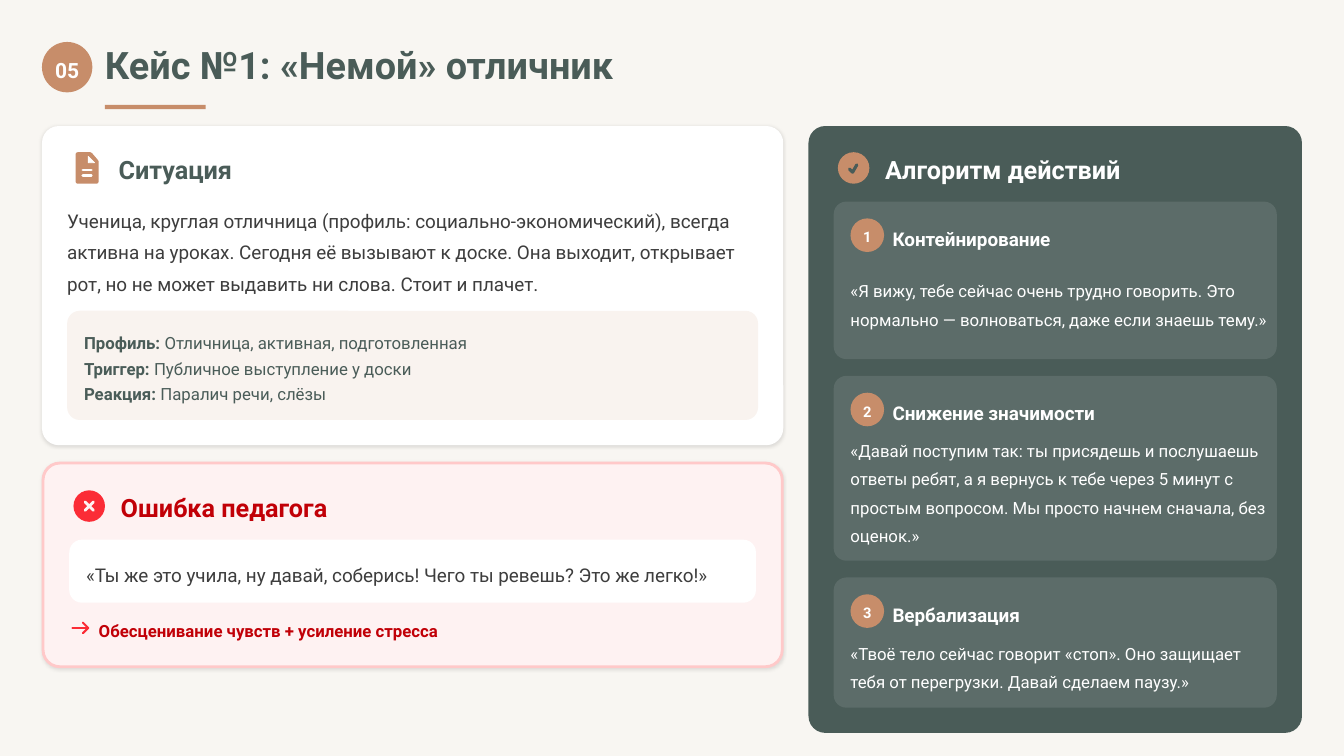
import pptx
import pptx.dml.color
import pptx.enum.shapes
import pptx.enum.text
import pptx.oxml
import pptx.oxml.ns
import pptx.util

RGBColor = pptx.dml.color.RGBColor
SHAPE = pptx.enum.shapes.MSO_SHAPE
ALIGN = pptx.enum.text.PP_ALIGN

PX = 9525
FONT = "Roboto"
PAPER = RGBColor(0xF8, 0xF6, 0xF2)
WHITE = RGBColor(0xFF, 0xFF, 0xFF)
CLAY = RGBColor(0xC7, 0x8D, 0x6A)
GREEN = RGBColor(0x4A, 0x5C, 0x58)
INK = RGBColor(0x3D, 0x3D, 0x3D)
PINK = RGBColor(0xFE, 0xF2, 0xF2)
PINK_EDGE = RGBColor(0xFF, 0xC9, 0xC9)
RED = RGBColor(0xFB, 0x2C, 0x36)
DARK_RED = RGBColor(0xC1, 0x00, 0x07)

PROFILE = [
    ("Профиль:", " Отличница, активная, подготовленная"),
    ("Триггер:", " Публичное выступление у доски"),
    ("Реакция:", " Паралич речи, слёзы"),
]
STEPS = [
    (150, "Контейнирование",
     "«Я вижу, тебе сейчас очень трудно говорить. Это нормально — волноваться, "
     "даже если знаешь тему.»"),
    (176, "Снижение значимости",
     "«Давай поступим так: ты присядешь и послушаешь ответы ребят, а я вернусь "
     "к тебе через 5 минут с простым вопросом. Мы просто начнем сначала, без оценок.»"),
    (124, "Вербализация",
     "«Твоё тело сейчас говорит «стоп». Оно защищает тебя от перегрузки. "
     "Давай сделаем паузу.»"),
]


def add_xml(parent, tag, inner="", **attrs):
    listed = " ".join(f'{k}="{v}"' for k, v in attrs.items())
    ns = pptx.oxml.ns.nsdecls("a")
    parent.append(pptx.oxml.parse_xml(f"<a:{tag} {ns} {listed}>{inner}</a:{tag}>"))


def shape(s, kind, x, y, w, h, fill, alpha=None, edge=None, shadow=False):
    sp = s.shapes.add_shape(kind, x * PX, y * PX, w * PX, h * PX)
    sp.shadow.inherit = False
    sp.fill.solid()
    sp.fill.fore_color.rgb = fill
    if alpha:
        color = sp._element.spPr.find(".//" + pptx.oxml.ns.qn("a:srgbClr"))
        add_xml(color, "alpha", val=alpha * 1000)
    if edge is None:
        sp.line.fill.background()
    else:
        sp.line.color.rgb = edge
        sp.line.width = pptx.util.Pt(2)
    if shadow:
        effects = sp._element.spPr.find(pptx.oxml.ns.qn("a:effectLst"))
        add_xml(effects, "outerShdw",
                '<a:srgbClr val="000000"><a:alpha val="10000"/></a:srgbClr>',
                blurRad=3 * PX, dist=PX, dir=5400000, algn="ctr", rotWithShape=0)
    return sp


def card(s, x, y, w, h, fill, radius=12, **style):
    sp = shape(s, SHAPE.ROUNDED_RECTANGLE, x, y, w, h, fill, **style)
    sp.adjustments[0] = radius / min(w, h)


def stroke(s, points, color, width, fill=None):
    builder = s.shapes.build_freeform(*points[0], scale=PX)
    builder.add_line_segments(points[1:], close=fill is not None)
    sp = builder.convert_to_shape()
    sp.shadow.inherit = False
    if fill is None:
        sp.fill.background()
    else:
        sp.fill.solid()
        sp.fill.fore_color.rgb = fill
    sp.line.color.rgb = color
    sp.line.width = pptx.util.Pt(width)
    ln = sp._element.spPr.find(pptx.oxml.ns.qn("a:ln"))
    ln.set("cap", "rnd")
    add_xml(ln, "round")


def text(s, x, y, w, h, words, size=12, color=WHITE, bold=False,
         spacing=1.3, align=ALIGN.LEFT, wrap=False, lead=""):
    tf = s.shapes.add_textbox(x * PX, y * PX, w * PX, h * PX).text_frame
    tf.margin_left = tf.margin_right = tf.margin_top = tf.margin_bottom = 0
    tf.vertical_anchor = pptx.enum.text.MSO_ANCHOR.MIDDLE
    tf.word_wrap = wrap
    p = tf.paragraphs[0]
    p.alignment = align
    p.line_spacing = spacing
    for part, weight in ((lead, True), (words, bold)):
        if part:
            r = p.add_run()
            r.text = part
            r.font.name = FONT
            r.font.size = pptx.util.Pt(size)
            r.font.bold = weight
            r.font.color.rgb = color


def badge(s, x, y, d, label, size):
    shape(s, SHAPE.OVAL, x, y, d, d, CLAY)
    text(s, x, y, d, d, label, size=size, bold=True, spacing=1.2,
         align=ALIGN.CENTER, wrap=True)


def heading(s, x, y, w, words, color):
    text(s, x, y, w, 32, words, size=18, color=color, bold=True, spacing=1.1)


def header(s):
    badge(s, 40, 40, 48, "05", 15)
    text(s, 100, 44, 511, 40, "Кейс №1: «Немой» отличник", size=27, color=GREEN,
         bold=True, spacing=0.9)
    shape(s, SHAPE.RECTANGLE, 100, 100, 96, 4, CLAY)


def situation(s):
    card(s, 40, 120, 706, 304, WHITE, radius=16, shadow=True)
    stroke(s, [(74, 147), (86, 147), (92, 154), (92, 173), (74, 173)], CLAY, 3, fill=CLAY)
    stroke(s, [(84, 149), (84, 155), (90, 155)], WHITE, 0.5, fill=WHITE)
    for y in (162, 167):
        stroke(s, [(79, y), (87, y)], WHITE, 2)
    heading(s, 113, 144, 120, "Ситуация", GREEN)
    text(s, 64, 192, 667, 88,
         "Ученица, круглая отличница (профиль: социально-экономический), всегда "
         "активна на уроках. Сегодня её вызывают к доске. Она выходит, открывает "
         "рот, но не может выдавить ни слова. Стоит и плачет.",
         size=13.5, color=INK, spacing=1.4, wrap=True)
    card(s, 64, 296, 658, 104, CLAY, alpha=10)
    for i, (lead, words) in enumerate(PROFILE):
        text(s, 80, 312 + 24 * i, 634, 24, words, color=GREEN, lead=lead)


def mistake(s):
    card(s, 41, 441, 704, 194, PINK, radius=16, edge=PINK_EDGE, shadow=True)
    shape(s, SHAPE.OVAL, 70, 467, 30, 30, RED)
    stroke(s, [(81, 478), (89, 486)], PINK, 2)
    stroke(s, [(89, 478), (81, 486)], PINK, 2)
    heading(s, 115, 466, 213, "Ошибка педагога", DARK_RED)
    card(s, 66, 514, 654, 60, WHITE)
    text(s, 82, 530, 631, 28,
         "«Ты же это учила, ну давай, соберись! Чего ты ревешь? Это же легко!»",
         size=13.5, color=INK)
    stroke(s, [(69, 598), (84, 598)], RED, 1.5)
    stroke(s, [(79, 593), (84, 598), (79, 603)], RED, 1.5)
    text(s, 94, 586, 339, 24, "Обесценивание чувств + усиление стресса",
         color=DARK_RED, bold=True)


def algorithm(s):
    card(s, 770, 120, 470, 578, GREEN, radius=16)
    shape(s, SHAPE.OVAL, 798, 145, 30, 30, CLAY)
    stroke(s, [(809, 161), (812, 164), (816, 157)], GREEN, 2.25)
    heading(s, 843, 144, 235, "Алгоритм действий", WHITE)
    top = 192
    for number, (height, title, words) in enumerate(STEPS, 1):
        card(s, 794, top, 422, height, WHITE, alpha=10)
        badge(s, 810, top + 16, 32, str(number), 10.5)
        text(s, 850, top + 18, 203, 28, title, size=13.5, bold=True)
        text(s, 810, top + 56, 398, height - 72, words, spacing=1.4, wrap=True)
        top += height + 16


def main():
    prs = pptx.Presentation()
    prs.slide_width = 1280 * PX
    prs.slide_height = 720 * PX
    s = prs.slides.add_slide(prs.slide_layouts[6])
    s.background.fill.solid()
    s.background.fill.fore_color.rgb = PAPER
    header(s)
    situation(s)
    mistake(s)
    algorithm(s)
    prs.save("out.pptx")


if __name__ == "__main__":
    main()
